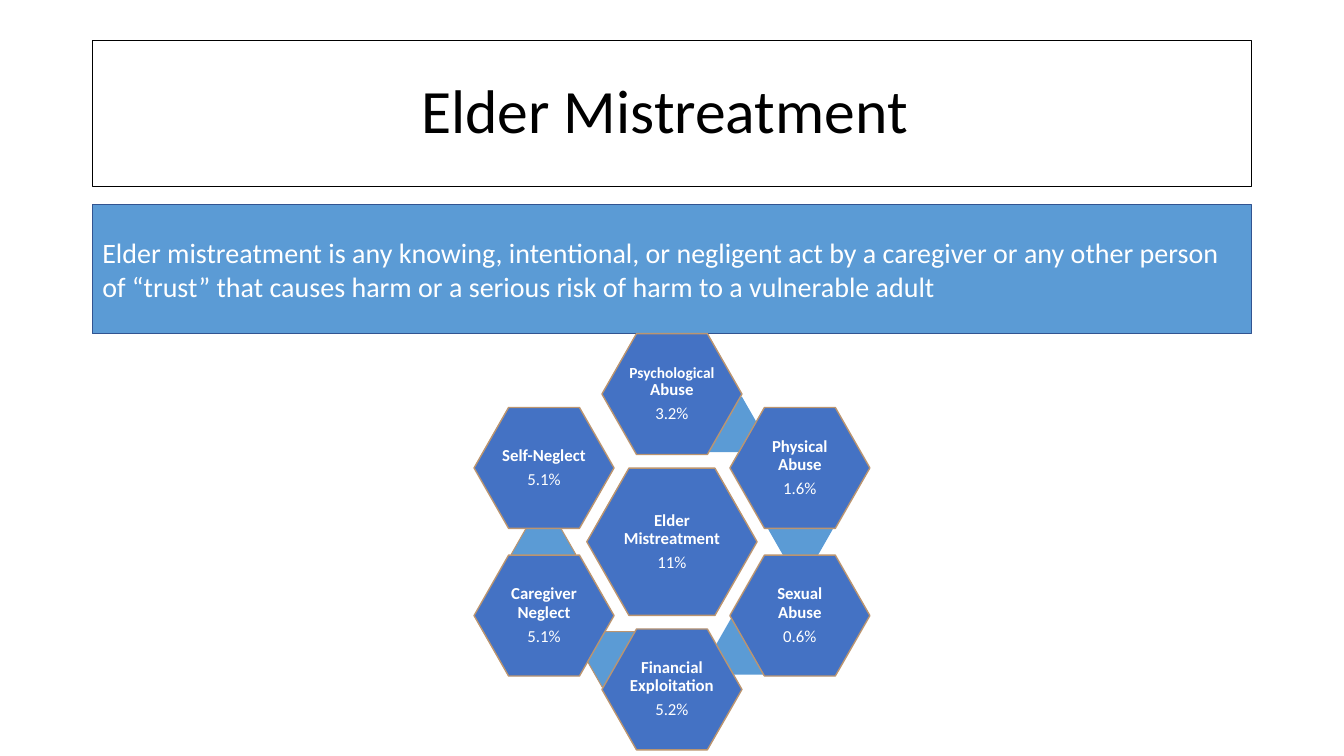
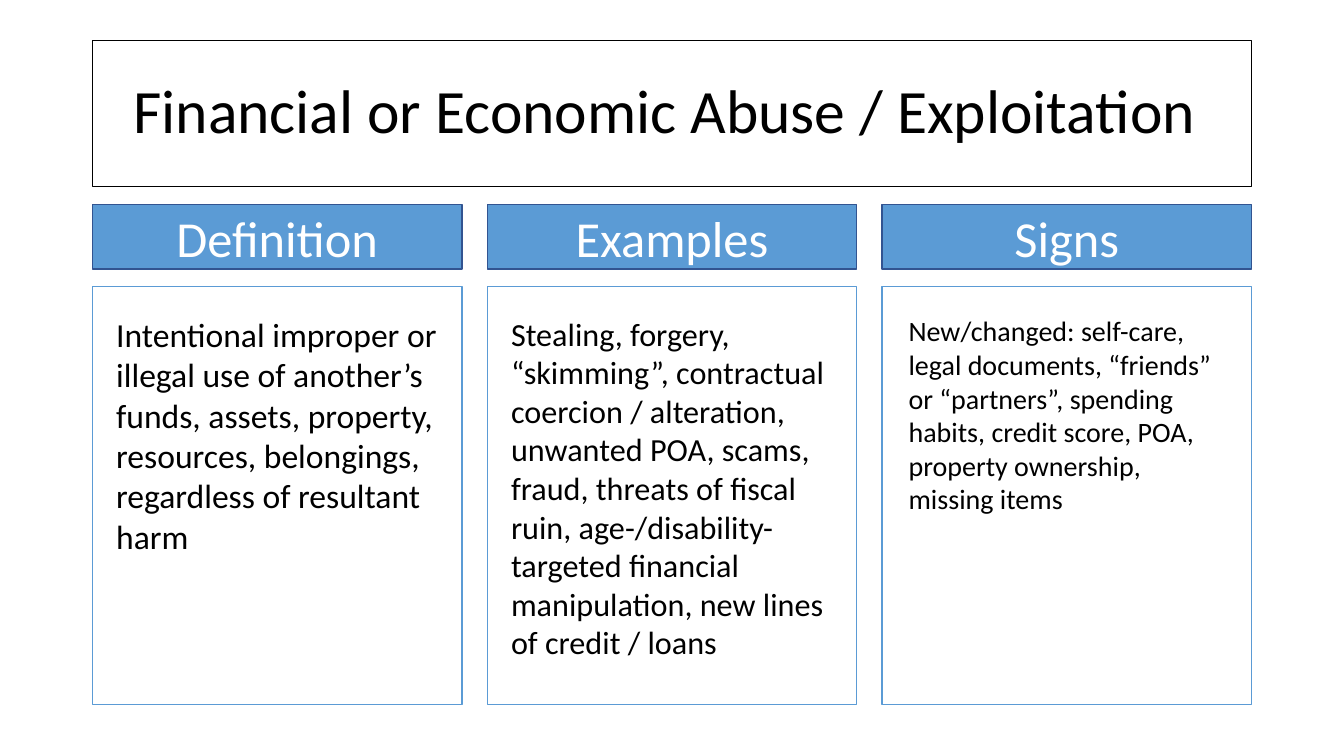
from math import cos, radians, sin

from pptx import Presentation
from pptx.dml.color import RGBColor
from pptx.enum.shapes import MSO_SHAPE
from pptx.enum.text import MSO_ANCHOR, PP_ALIGN
from pptx.util import Pt

COLORS = {
    "ink": "000000",
    "white": "FFFFFF",
    "band": "5B9BD5",
    "band_edge": "325491",
    "hexagon": "4472C4",
    "hexagon_edge": "BB9570",
}
FONT = "Calibri"

SLIDE_SIZE = (960, 540)
LEFT, WIDTH = 66, 828
TITLE_BOX = (LEFT, 28.8, WIDTH, 104.4)
BAND_TOP = 146.2

HEXAGON_SIZE = (100, 86.4)
CORE_SIZE = (121.6, 105.2)
LINK_SIZE = (46, 39.6)
RING_RADIUS, LINK_RADIUS = 105.5, 92.2
LINK_START = 24.5  # degrees clockwise from the top
STEP = 60

DEFINITION = (
    "Elder mistreatment is any knowing, intentional, or negligent act by a "
    "caregiver or any other person of “trust” that causes harm or a serious "
    "risk of harm to a vulnerable adult"
)
CORE = ("Elder Mistreatment", "11%")
ABUSE_TYPES = [  # clockwise from the top
    ("Psychological Abuse", "3.2%"),
    ("Physical Abuse", "1.6%"),
    ("Sexual Abuse", "0.6%"),
    ("Financial Exploitation", "5.2%"),
    ("Caregiver Neglect", "5.1%"),
    ("Self-Neglect", "5.1%"),
]
LINK_EDGES = [None, None, None, "hexagon_edge", "hexagon_edge"]

ASPECTS = [  # heading, text, text size, side inset
    ("Definition",
     "Intentional improper or illegal use of another’s funds, assets, "
     "property, resources, belongings, regardless of resultant harm", 24, 17),
    ("Examples",
     "Stealing, forgery, “skimming”, contractual coercion / alteration, "
     "unwanted POA, scams, fraud, threats of fiscal ruin, "
     "age-/disability-targeted financial manipulation, new lines of credit "
     "/ loans", 23, 17),
    ("Signs",
     "New/changed: self-care, legal documents, “friends” or “partners”, "
     "spending habits, credit score, POA, property ownership, missing items",
     20, 19),
]


def rgb(name):
    return RGBColor.from_string(COLORS[name])


def add_box(slide, box, fill=None, edge=None, edge_width=1,
            kind=MSO_SHAPE.RECTANGLE):
    shape = slide.shapes.add_shape(kind, *(Pt(length) for length in box))
    shape.shadow.inherit = False
    if fill:
        shape.fill.solid()
        shape.fill.fore_color.rgb = rgb(fill)
    else:
        shape.fill.background()
    if edge:
        shape.line.color.rgb = rgb(edge)
        shape.line.width = Pt(edge_width)
    else:
        shape.line.fill.background()
    return shape


def set_insets(frame, side, top):
    frame.margin_left = frame.margin_right = Pt(side)
    frame.margin_top = frame.margin_bottom = Pt(top)


def write(paragraph, text, size, color, align=PP_ALIGN.LEFT, bold=False):
    paragraph.text = text
    paragraph.alignment = align
    font = paragraph.font
    font.name, font.size, font.bold = FONT, Pt(size), bold
    font.color.rgb = rgb(color)


def add_title(slide, text):
    title = add_box(slide, TITLE_BOX, edge="ink", edge_width=0.75)
    paragraph = title.text_frame.paragraphs[0]
    write(paragraph, text, 44, "ink", PP_ALIGN.CENTER)
    paragraph.line_spacing = 0.9


def add_band(slide, box, text, size, align):
    band = add_box(slide, box, "band", "band_edge")
    write(band.text_frame.paragraphs[0], text, size, "white", align)


def add_hexagon(slide, center, size, fill, edge=None, edge_width=1):
    (x, y), (width, height) = center, size
    hexagon = add_box(slide, (x - width / 2, y - height / 2, width, height),
                      fill, edge, edge_width, MSO_SHAPE.HEXAGON)
    hexagon.adjustments[0] = 0.286
    return hexagon


def add_rate(slide, center, size, label, rate):
    """Hexagon with a bold label above its percentage."""
    hexagon = add_hexagon(slide, center, size, "hexagon", "hexagon_edge")
    frame = hexagon.text_frame
    set_insets(frame, 1.4, 1.4)
    label_line, rate_line = frame.paragraphs[0], frame.add_paragraph()
    write(label_line, label, 12, "white", PP_ALIGN.CENTER, bold=True)
    write(rate_line, rate, 12, "white", PP_ALIGN.CENTER)
    for paragraph in (label_line, rate_line):
        paragraph.line_spacing = 0.9
        paragraph.space_after = Pt(4.2)
    if label.startswith("Psychological"):
        first_word, rest = label.split(" ")
        label_line.runs[0].text = first_word + " "
        label_line.runs[0].font.size = Pt(11)
        label_line.add_run().text = rest


def around(center, radius, angle):
    """Point at an angle in degrees, clockwise from the top."""
    turn = radians(angle)
    return center[0] + radius * sin(turn), center[1] - radius * cos(turn)


def add_abuse_ring(slide, center):
    add_rate(slide, center, CORE_SIZE, *CORE)
    for i, edge in enumerate(LINK_EDGES):
        spot = around(center, LINK_RADIUS, LINK_START + i * STEP)
        add_hexagon(slide, spot, LINK_SIZE, "band", edge, 0.75)
    for i, (label, rate) in enumerate(ABUSE_TYPES):
        spot = around(center, RING_RADIUS, i * STEP)
        add_rate(slide, spot, HEXAGON_SIZE, label, rate)


def add_aspect(slide, box, heading, text, size, inset):
    """Column with a heading band above a framed text."""
    left, top, width, height = box
    band_height, gap = 46, 12.6
    add_band(slide, (left, top, width, band_height), heading, 36,
             PP_ALIGN.CENTER)
    offset = band_height + gap
    panel = add_box(slide, (left, top + offset, width, height - offset),
                    edge="band")
    frame = panel.text_frame
    frame.vertical_anchor = MSO_ANCHOR.TOP
    set_insets(frame, inset, 19.4)
    write(frame.paragraphs[0], text, size, "ink")


def build_overview(slide):
    add_title(slide, "Elder Mistreatment ")
    add_band(slide, (LEFT, BAND_TOP, WIDTH, 92.2), DEFINITION, 20,
             PP_ALIGN.LEFT)
    add_abuse_ring(slide, (480, 387))


def build_financial(slide):
    add_title(slide, "Financial or Economic Abuse / Exploitation ")
    gap = 18
    width = (WIDTH - gap * (len(ASPECTS) - 1)) / len(ASPECTS)
    for i, aspect in enumerate(ASPECTS):
        left = LEFT + i * (width + gap)
        add_aspect(slide, (left, BAND_TOP, width, 357), *aspect)


def main():
    deck = Presentation()
    deck.slide_width, deck.slide_height = (Pt(side) for side in SLIDE_SIZE)
    blank = deck.slide_layouts[6]
    for build in (build_overview, build_financial):
        build(deck.slides.add_slide(blank))
    deck.save("out.pptx")


if __name__ == "__main__":
    main()
